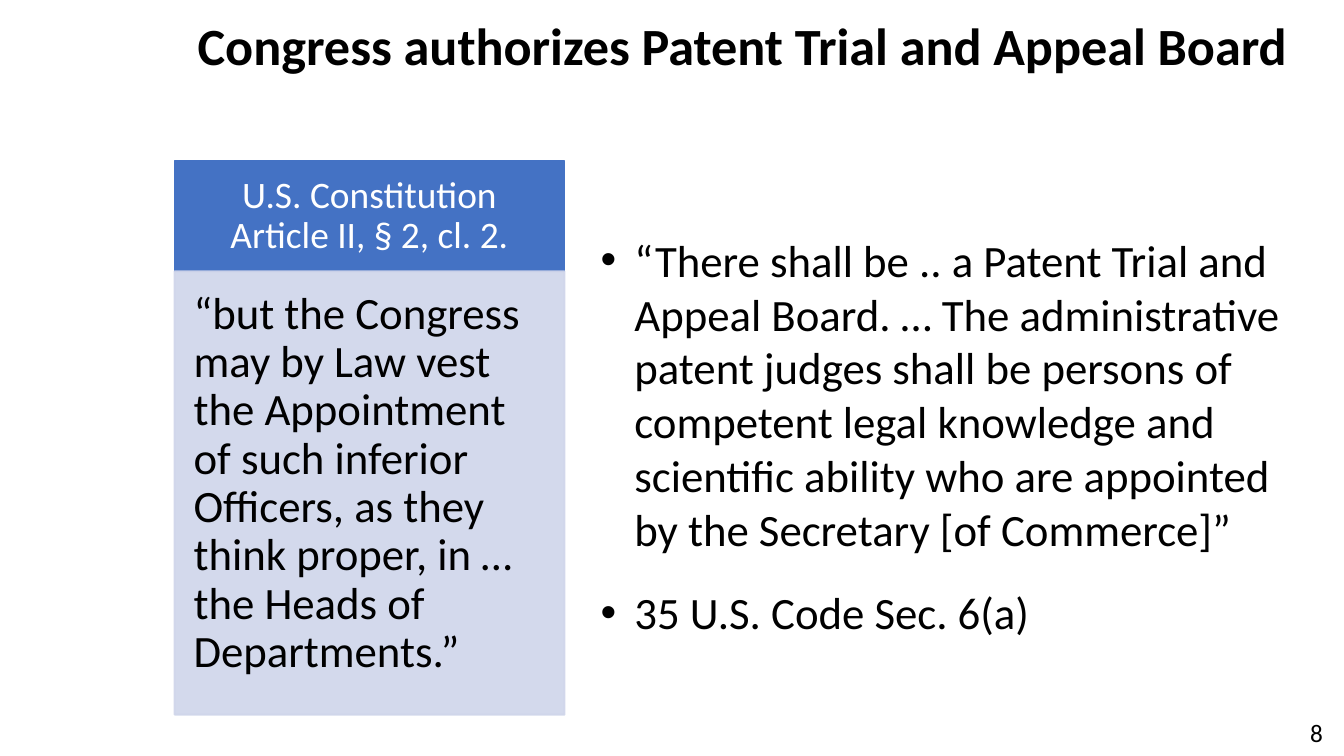
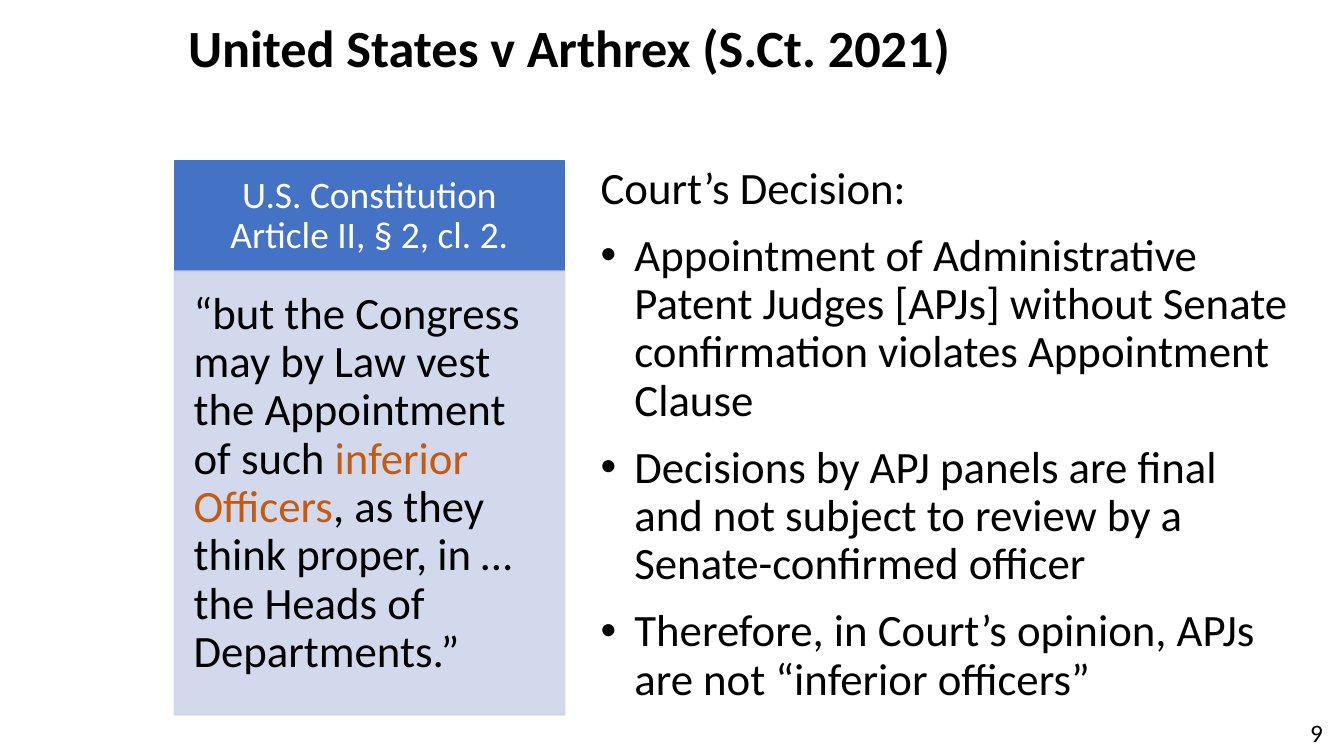
from lxml import etree
from pptx import Presentation
from pptx.dml.color import RGBColor
from pptx.enum.shapes import MSO_SHAPE
from pptx.enum.text import MSO_ANCHOR, MSO_AUTO_SIZE, PP_ALIGN
from pptx.oxml.ns import qn
from pptx.util import Cm, Pt

RECT = MSO_SHAPE.RECTANGLE
TOP, MIDDLE = MSO_ANCHOR.TOP, MSO_ANCHOR.MIDDLE
LEFT, CENTER = PP_ALIGN.LEFT, PP_ALIGN.CENTER
NO_FIT = MSO_AUTO_SIZE.NONE

FONT = "Calibri"
BLACK, WHITE = "000000", "FFFFFF"
BLUE, PALE_BLUE, ORANGE = "4472C4", "CFD5EA", "C55A11"
TITLE_ONLY = 5

CARD_LEFT, CARD_TOP, CARD_WIDTH = 3.3, 3.05, 7.37
HEADER_HEIGHT, QUOTE_HEIGHT = 2.08, 8.38
BODY_LEFT = 11.1
BULLET_INDENT = 0.64

CLAUSE = "U.S. Constitution Article II, § 2, cl. 2."
QUOTE = ("“but the Congress may by Law vest the Appointment of such inferior Officers, "
         "as they think proper, in … the Heads of Departments.”")
STATUTE = [
    "“There shall be .. a Patent Trial and Appeal Board. … The administrative patent "
    "judges shall be persons of competent legal knowledge and scientific ability who "
    "are appointed by the Secretary [of Commerce]”",
    "35 U.S. Code Sec. 6(a)",
]
DECISION = [
    "Appointment of Administrative Patent Judges [APJs] without Senate confirmation "
    "violates Appointment Clause",
    "Decisions by APJ panels are final and not subject to review by a "
    "Senate-confirmed officer",
    "Therefore, in Court’s opinion, APJs are not “inferior officers”",
]


def rgb(color):
    return RGBColor.from_string(color)


def box(left, top, width, height):
    return Cm(left), Cm(top), Cm(width), Cm(height)


def style_runs(p, size, color=BLACK, bold=False):
    for r in p.runs:
        r.font.name = FONT
        r.font.size = Pt(size)
        r.font.bold = bold
        r.font.color.rgb = rgb(color)


def add_bullet(p):
    pPr = p._p.get_or_add_pPr()
    pPr.set("marL", str(Cm(BULLET_INDENT)))
    pPr.set("indent", str(-Cm(BULLET_INDENT)))
    etree.SubElement(pPr, qn("a:buFont"), typeface="Arial")
    etree.SubElement(pPr, qn("a:buChar"), char="•")


def set_alpha(sp, percent):
    for color in sp._element.spPr.iter(qn("a:srgbClr")):
        etree.SubElement(color, qn("a:alpha"), val=str(percent * 1000))


def set_title(s, text, left, top, width, height):
    sp = s.shapes.title
    sp.left, sp.top, sp.width, sp.height = box(left, top, width, height)
    tf = sp.text_frame
    tf.text = text
    tf.word_wrap = True
    tf.auto_size = NO_FIT
    tf.vertical_anchor = TOP
    p = tf.paragraphs[0]
    p.alignment = LEFT
    p.line_spacing = 0.9
    style_runs(p, 28, bold=True)


def add_text(s, text, size, left, top, width, height):
    tf = s.shapes.add_textbox(*box(left, top, width, height)).text_frame
    tf.word_wrap = True
    tf.text = text
    style_runs(tf.paragraphs[0], size)


def add_body(s, bullets, top, width, height, gap, spacing, heading=None):
    tf = s.shapes.add_textbox(*box(BODY_LEFT, top, width, height)).text_frame
    tf.word_wrap = True
    lines = ([heading] if heading else []) + bullets
    for i, line in enumerate(lines):
        p = tf.paragraphs[0] if i == 0 else tf.add_paragraph()
        p.text = line
        p.line_spacing = spacing
        if i:
            p.space_before = Pt(gap)
        if line != heading:
            add_bullet(p)
        style_runs(p, 24)


def add_panel(s, color, top, height, margins, anchor, align):
    sp = s.shapes.add_shape(RECT, *box(CARD_LEFT, top, CARD_WIDTH, height))
    sp.shadow.inherit = False
    sp.fill.solid()
    sp.fill.fore_color.rgb = rgb(color)
    sp.line.color.rgb = rgb(color)
    sp.line.width = Pt(1)
    tf = sp.text_frame
    tf.word_wrap = True
    tf.vertical_anchor = anchor
    tf.margin_left, tf.margin_top, tf.margin_right, tf.margin_bottom = map(Cm, margins)
    p = tf.paragraphs[0]
    p.alignment = align
    p.line_spacing = 0.9
    return sp, p


def add_clause_card(s, highlight=None):
    _, p = add_panel(s, BLUE, CARD_TOP, HEADER_HEIGHT,
                     (0.4, 0.23, 0.4, 0.23), MIDDLE, CENTER)
    p.text = CLAUSE
    style_runs(p, 20, WHITE)

    sp, p = add_panel(s, PALE_BLUE, CARD_TOP + HEADER_HEIGHT, QUOTE_HEIGHT,
                      (0.36, 0.36, 0.48, 0.53), TOP, LEFT)
    set_alpha(sp, 90)
    parts = QUOTE.partition(highlight) if highlight else [QUOTE]
    for part in parts:
        p.add_run().text = part
    style_runs(p, 24)
    if highlight:
        p.runs[1].font.color.rgb = rgb(ORANGE)


def add_page_number(s, number):
    add_text(s, str(number), 13.5, 24.51, 13.44, 1.07, 0.84)


def main():
    prs = Presentation()
    prs.slide_width, prs.slide_height = Cm(25.4), Cm(14.29)
    layout = prs.slide_layouts[TITLE_ONLY]

    s = prs.slides.add_slide(layout)
    set_title(s, "Congress authorizes Patent Trial and Appeal Board", 3.48, 0.25, 21.11, 1.17)
    add_body(s, STATUTE, 4.27, 13.49, 9.75, gap=16, spacing=1.0)
    add_clause_card(s)
    add_page_number(s, 8)

    s = prs.slides.add_slide(layout)
    set_title(s, "United States v Arthrex (S.Ct. 2021)", 3.3, 0.3, 16.89, 1.07)
    add_body(s, DECISION, 3, 13.54, 11.29, gap=10, spacing=0.9, heading="Court’s Decision:")
    add_clause_card(s, highlight="inferior Officers")
    add_page_number(s, 9)

    prs.save("out.pptx")


if __name__ == "__main__":
    main()
